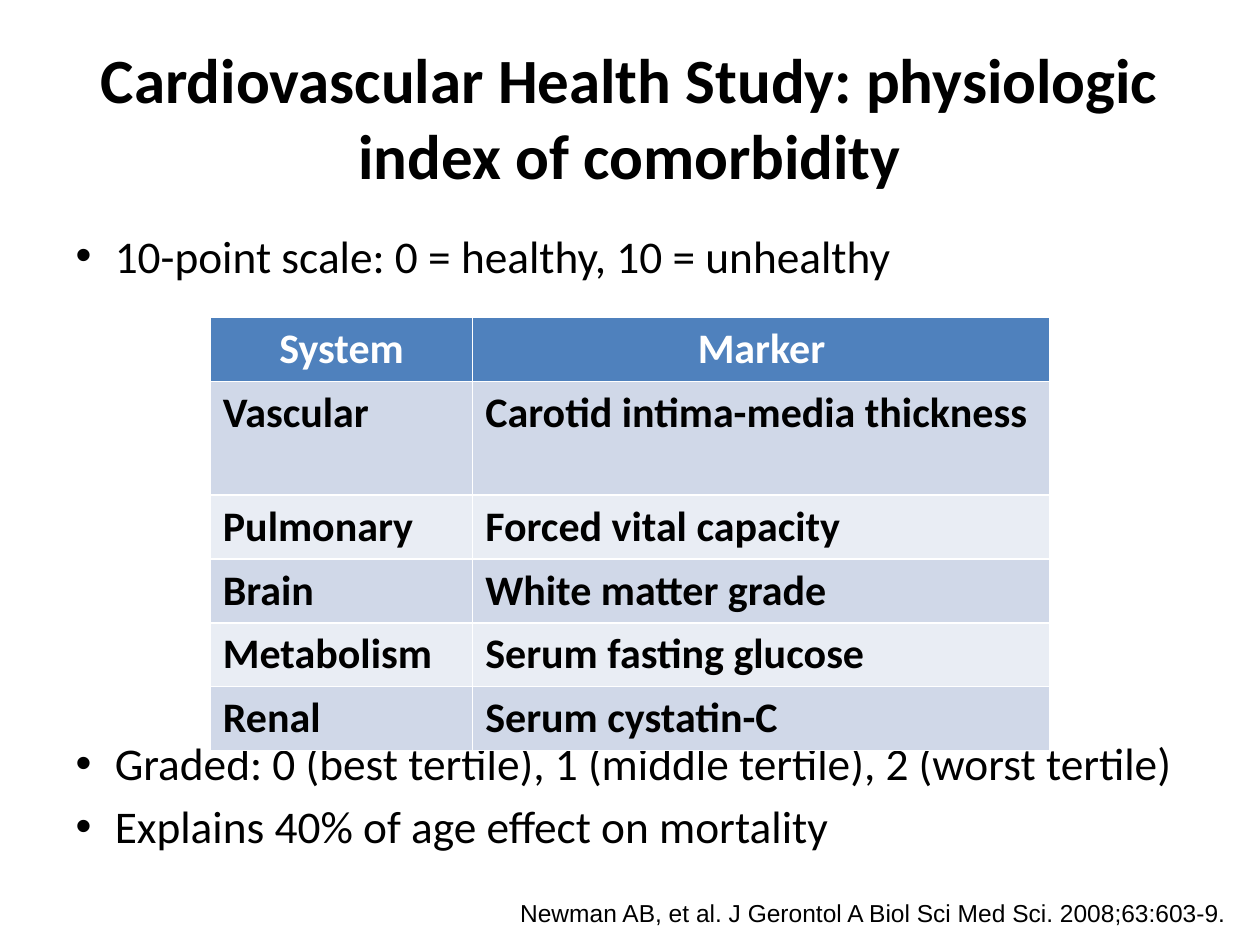
from pptx import Presentation
from pptx.dml.color import RGBColor as Color
from pptx.enum.text import MSO_ANCHOR as Anchor, MSO_AUTO_SIZE as AutoSize, PP_ALIGN as Align
from pptx.util import Cm, Pt

TITLE = "Cardiovascular Health Study: physiologic index of comorbidity"
POINTS = [
    ("10-point scale: 0 = healthy, 10 = unhealthy", 0),
    ("Graded: 0 (best tertile), 1 (middle tertile), 2 (worst tertile)", 258.7),
    ("Explains 40% of age effect on mortality", 5),
]
MARKERS = [
    ("System", "Marker"),
    ("Vascular", "Carotid intima-media thickness"),
    ("Pulmonary", "Forced vital capacity"),
    ("Brain", "White matter grade"),
    ("Metabolism", "Serum fasting glucose"),
    ("Renal", "Serum cystatin-C"),
]
CITATION = "Newman AB, et al. J Gerontol A Biol Sci Med Sci. 2008;63:603-9."

THEME = {
    "title": {"name": "Calibri", "size": Pt(36), "bold": True, "color": "000000"},
    "body": {"name": "Calibri", "size": Pt(25.9), "bold": False, "color": "000000"},
    "header": {"name": "Calibri", "size": Pt(24), "bold": True, "color": "FFFFFF"},
    "cell": {"name": "Calibri", "size": Pt(24), "bold": True, "color": "000000"},
    "citation": {"name": "Arial", "size": Pt(14), "bold": False, "color": "000000"},
    "header_fill": "4F81BD",
    "bands": ("D0D8E8", "E9EDF4"),
}

BOXES = {
    "title": (1.48, 0.76, 22.43, 3.18),
    "body": (0, 4.47, 24.13, 13.97),
    "citation": (7.82, 17.98, 17.15, 0.86),
    "table": (4.24, 6.4, 16.93, 8.64),
}
COLUMN_WIDTHS = (5.29, 11.64)
ROW_HEIGHT, TALL_ROW_HEIGHT = 1.27, 2.29
TALL_ROW = 1
BULLET_MARGIN, BULLET_HANG = 2.06, 0.79


def place(shape, box):
    for name, value in zip(("left", "top", "width", "height"), box):
        setattr(shape, name, Cm(value))


def write(paragraph, text, style, align=Align.LEFT):
    paragraph.alignment = align
    run = paragraph.add_run()
    run.text = text
    for name, value in THEME[style].items():
        if name == "color":
            run.font.color.rgb = Color.from_string(value)
        else:
            setattr(run.font, name, value)


def format_frame(frame, anchor):
    for name, value in {"word_wrap": True, "auto_size": AutoSize.NONE,
                        "vertical_anchor": anchor}.items():
        setattr(frame, name, value)


def add_points(frame):
    for index, (text, space) in enumerate(POINTS):
        paragraph = frame.add_paragraph() if index else frame.paragraphs[0]
        write(paragraph, text, "body")
        paragraph.space_before = Pt(space)
        properties = paragraph._p.get_or_add_pPr()
        properties.set("marL", str(Cm(BULLET_MARGIN)))
        properties.set("indent", str(-Cm(BULLET_HANG)))


def add_markers(slide):
    box = [Cm(value) for value in BOXES["table"]]
    table = slide.shapes.add_table(len(MARKERS), len(COLUMN_WIDTHS), *box).table
    for column, width in zip(table.columns, COLUMN_WIDTHS):
        column.width = Cm(width)
    for index, values in enumerate(MARKERS):
        table.rows[index].height = Cm(TALL_ROW_HEIGHT if index == TALL_ROW else ROW_HEIGHT)
        header = index == 0
        fill = THEME["header_fill"] if header else THEME["bands"][(index - 1) % 2]
        for cell, text in zip(table.rows[index].cells, values):
            cell.fill.solid()
            cell.fill.fore_color.rgb = Color.from_string(fill)
            write(cell.text_frame.paragraphs[0], text, "header" if header else "cell",
                  Align.CENTER if header else Align.LEFT)


def main():
    presentation = Presentation()
    presentation.slide_width, presentation.slide_height = Cm(25.4), Cm(19.05)
    slide = presentation.slides.add_slide(presentation.slide_layouts[1])
    title, body = slide.shapes.title, slide.placeholders[1]
    citation = slide.shapes.add_textbox(0, 0, 0, 0)
    for shape, name, anchor in ((title, "title", Anchor.MIDDLE), (body, "body", Anchor.TOP),
                                (citation, "citation", Anchor.TOP)):
        place(shape, BOXES[name])
        format_frame(shape.text_frame, anchor)
    write(title.text_frame.paragraphs[0], TITLE, "title", Align.CENTER)
    add_points(body.text_frame)
    write(citation.text_frame.paragraphs[0], CITATION, "citation", Align.RIGHT)
    add_markers(slide)
    presentation.save("out.pptx")


if __name__ == "__main__":
    main()
